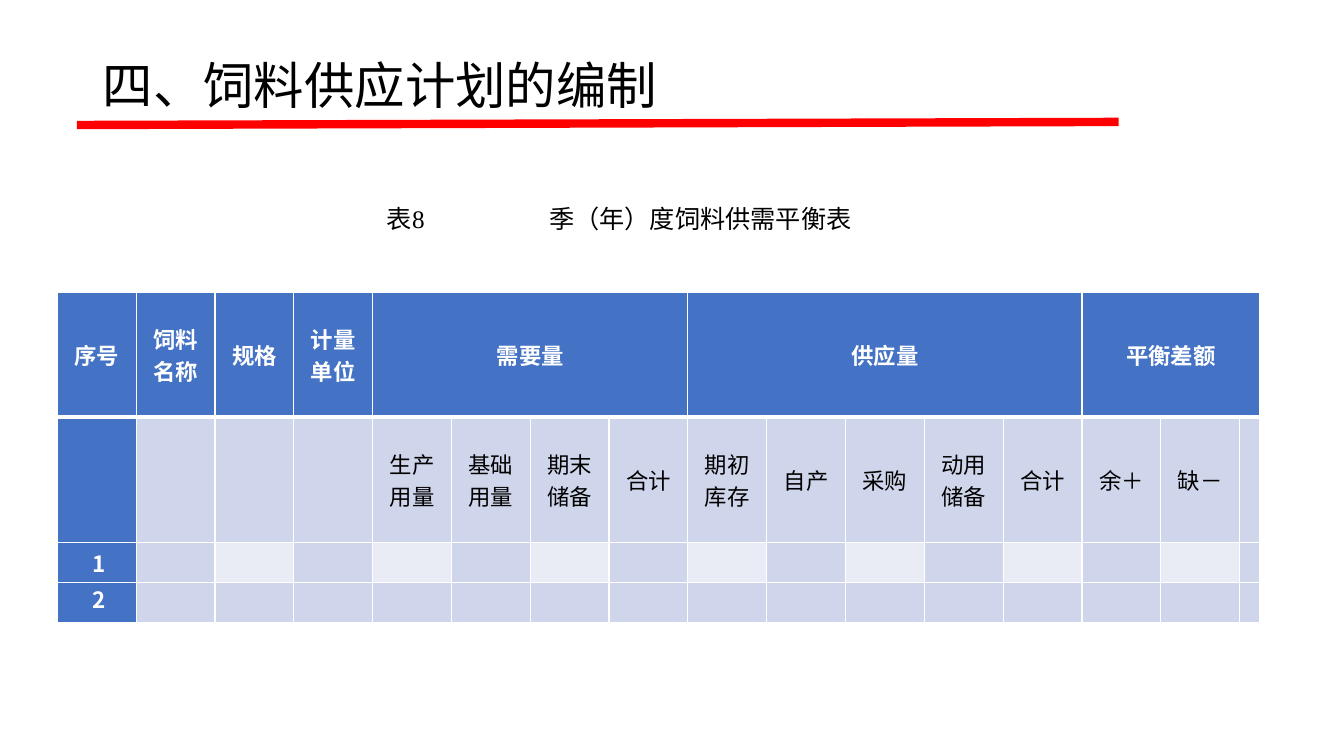
from dataclasses import dataclass

from lxml import etree
from pptx import Presentation
from pptx.dml.color import RGBColor
from pptx.enum import shapes, text
from pptx.oxml import ns
from pptx.util import Pt


@dataclass(frozen=True)
class Theme:
    sans: str = "Noto Sans CJK SC"
    serif: str = "Times New Roman"
    ink: str = "000000"
    white: str = "FFFFFF"
    red: str = "FF0000"
    head: str = "4472C4"
    band: str = "CFD5EA"
    pale: str = "E9EBF5"
    title: int = 36
    body: int = 18
    cell: int = 16


HEADS = {0: ("序号", 1), 1: ("饲料名称", 1), 2: ("规格", 1), 3: ("计量单位", 1),
         4: ("需要量", 4), 8: ("供应量", 5), 13: ("平衡差额", 3)}
SUBS = ["生产用量", "基础用量", "期末储备", "合计", "期初库存", "自产",
        "采购", "动用储备", "合计", "余＋", "缺－"]
WIDTHS = [56.3] * 15 + [14.4]
HEIGHTS = [89.3, 89.3, 28.8, 28.8]


def add(node, tag, **attrs):
    return etree.SubElement(node, ns.qn(tag), **attrs)


class Deck:
    def __init__(self, theme):
        self.theme = theme
        self.prs = Presentation()
        self.prs.slide_width, self.prs.slide_height = Pt(960), Pt(540)
        self.slide = self.prs.slides.add_slide(self.prs.slide_layouts[5])

    def font(self, para, size, color, name=None, bold=False):
        font = para.font
        font.name = name or self.theme.sans
        font.size, font.bold = Pt(size), bold
        font.color.rgb = RGBColor.from_string(color)
        props = para._p.pPr.find(ns.qn("a:defRPr"))
        add(props, "a:ea", typeface=self.theme.sans)

    def title(self, words, x, y, w, h):
        box = self.slide.shapes.title
        box.left, box.top, box.width, box.height = Pt(x), Pt(y), Pt(w), Pt(h)
        frame = box.text_frame
        frame.text = words
        frame.auto_size = text.MSO_AUTO_SIZE.NONE
        frame.vertical_anchor = text.MSO_ANCHOR.MIDDLE
        para = frame.paragraphs[0]
        para.alignment, para.line_spacing = text.PP_ALIGN.LEFT, 0.9
        self.font(para, self.theme.title, self.theme.ink)

    def rule(self, x1, y1, x2, y2, width):
        line = self.slide.shapes.add_connector(
            shapes.MSO_CONNECTOR.STRAIGHT, Pt(x1), Pt(y1), Pt(x2), Pt(y2))
        line.line.color.rgb = RGBColor.from_string(self.theme.red)
        line.line.width = Pt(width)
        add(line._element.spPr, "a:effectLst")

    def caption(self, runs, tabs, x, y, w, h, inset):
        """Place one line of (words, underlined) runs on tab stops."""
        frame = self.slide.shapes.add_textbox(
            Pt(x), Pt(y), Pt(w), Pt(h)).text_frame
        frame.word_wrap = True
        frame.margin_left = Pt(inset)
        para = frame.paragraphs[0]
        stops = add(para._p.get_or_add_pPr(), "a:tabLst")
        for stop in tabs:
            add(stops, "a:tab", pos=str(Pt(stop)), algn="l")
        for words, under in runs:
            run = para.add_run()
            run.text, run.font.underline = words, under
        self.font(para, self.theme.body, self.theme.ink, self.theme.serif)

    def edges(self, cell, top, low):
        props = cell._tc.get_or_add_tcPr()
        sides = {"a:lnL": 1, "a:lnR": 1, "a:lnT": top, "a:lnB": low}
        for tag, width in sides.items():
            fill = add(add(props, tag, w=str(Pt(width))), "a:solidFill")
            add(fill, "a:srgbClr", val=self.theme.white)

    def cell(self, cell, words, fill, dark, top, low):
        self.edges(cell, top, low)
        cell.fill.solid()
        cell.fill.fore_color.rgb = RGBColor.from_string(fill)
        cell.margin_left = cell.margin_right = Pt(5)
        cell.margin_top = cell.margin_bottom = 0
        cell.vertical_anchor = text.MSO_ANCHOR.MIDDLE
        cell.text = words
        para = cell.text_frame.paragraphs[0]
        para.alignment = text.PP_ALIGN.CENTER
        color = self.theme.white if dark else self.theme.ink
        self.font(para, self.theme.cell, color, bold=dark)

    def table(self, x, y):
        rows, cols = len(HEIGHTS), len(WIDTHS)
        grid = self.slide.shapes.add_table(
            rows, cols, Pt(x), Pt(y), Pt(sum(WIDTHS)), Pt(sum(HEIGHTS))).table
        grid.first_row = grid.horz_banding = False
        for col, width in zip(grid.columns, WIDTHS):
            col.width = Pt(width)
        for row, height in zip(grid.rows, HEIGHTS):
            row.height = Pt(height)

        words = {(0, c): head for c, (head, _) in HEADS.items()}
        words.update({(1, c): sub for c, sub in enumerate(SUBS, 4)})
        words.update({(2, 0): " 1", (3, 0): " 2"})
        for r in range(rows):
            for c in range(cols):
                dark = r == 0 or c == 0
                pale = r == 2 and c % 2 == 0
                fill = (self.theme.head if dark else
                        self.theme.pale if pale else self.theme.band)
                self.cell(grid.cell(r, c), words.get((r, c), ""), fill, dark,
                          top=3 if r == 1 else 1, low=3 if r == 0 else 1)
        grid.cell(rows - 1, 0).vertical_anchor = text.MSO_ANCHOR.TOP
        for c, (_, span) in HEADS.items():
            if span > 1:
                grid.cell(0, c).merge(grid.cell(0, c + span - 1))


def main():
    deck = Deck(Theme())
    deck.rule(55, 89.3, 799, 87.1, width=6)
    deck.title("四、饲料供应计划的编制", 66.2, 28.8, 828, 69)
    deck.table(41, 208.8)
    deck.caption([("表8\t", False), ("\t", True),
                  ("\t季（年）度饲料供需平衡表", False)],
                 [67, 111.5, 116], 197.3, 141.8, 480, 29, inset=79)
    deck.prs.save("out.pptx")


if __name__ == "__main__":
    main()
